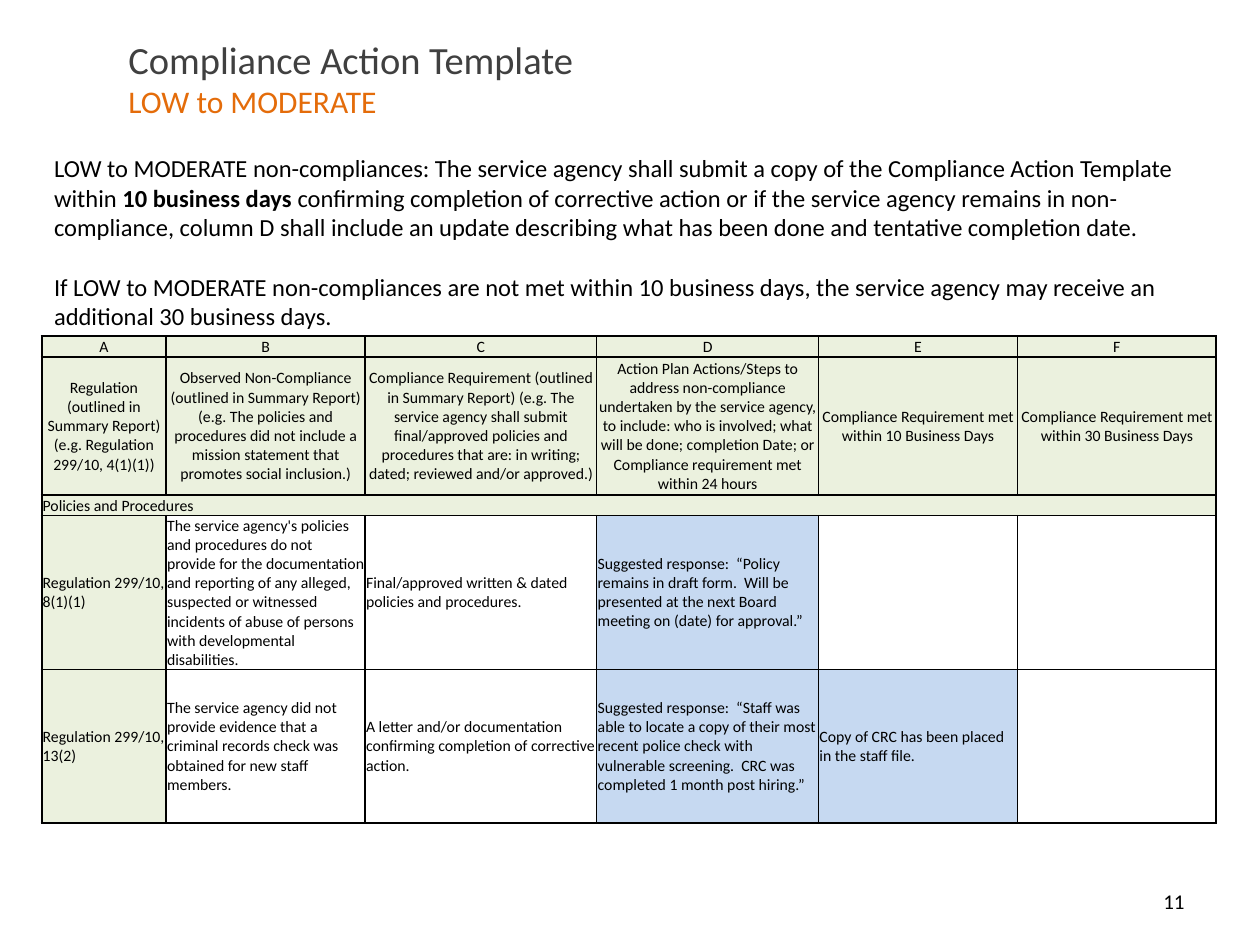
from lxml import etree
from pptx import Presentation
from pptx.dml.color import RGBColor
from pptx.enum.text import MSO_ANCHOR, PP_ALIGN
from pptx.oxml.ns import qn
from pptx.util import Cm, Pt

LEFT, CENTER, RIGHT = PP_ALIGN.LEFT, PP_ALIGN.CENTER, PP_ALIGN.RIGHT
TOP, MIDDLE = MSO_ANCHOR.TOP, MSO_ANCHOR.MIDDLE

FONT = "Calibri"
BLACK = RGBColor(0x00, 0x00, 0x00)
GREY = RGBColor(0x40, 0x40, 0x40)
ORANGE = RGBColor(0xE4, 0x6C, 0x0A)
WHITE = RGBColor(0xFF, 0xFF, 0xFF)
GREEN = RGBColor(0xEB, 0xF1, 0xDE)
BLUE = RGBColor(0xC6, 0xD9, 0xF1)

# Content
TITLE = "Compliance Action Template"
LEVEL = "LOW to MODERATE"
PAGE_NUMBER = "11"
RULES = [  # paragraphs of (text, bold) runs
    [("LOW to MODERATE non-compliances: The service agency shall submit a copy of the "
      "Compliance Action Template within ", False),
     ("10 business days ", True),
     ("confirming completion of corrective action or if the service agency remains in "
      "non-compliance, column D shall include an update describing what has been done "
      "and tentative completion date.", False)],
    [("If LOW to MODERATE non-compliances are not met within 10 business days, the "
      "service agency may receive an additional 30 business days.", False)],
]
HEADINGS = [
    list("ABCDEF"),
    ["Regulation (outlined in Summary Report) (e.g. Regulation 299/10, 4(1)(1))",
     "Observed Non-Compliance (outlined in Summary Report) (e.g. The policies and "
     "procedures did not include a mission statement that promotes social inclusion.)",
     "Compliance Requirement (outlined in Summary Report) (e.g. The service agency shall "
     "submit final/approved policies and procedures that are: in writing; dated; "
     "reviewed and/or approved.)",
     "Action Plan Actions/Steps to address non-compliance undertaken by the service "
     "agency, to include: who is involved; what will be done; completion Date; or "
     "Compliance requirement met within 24 hours",
     "Compliance Requirement met within 10 Business Days",
     "Compliance Requirement met within 30 Business Days"],
]
SECTION = ["Policies and Procedures", "", "", "", "", ""]
FINDINGS = [
    ["Regulation 299/10, 8(1)(1)",
     "The service agency's policies and procedures do not provide for the documentation "
     "and reporting of any alleged, suspected or witnessed incidents of abuse of persons "
     "with developmental disabilities.",
     "Final/approved written & dated policies and procedures.",
     "Suggested response:  “Policy remains in draft form.  Will be presented at the next "
     "Board meeting on (date) for approval.”",
     "", ""],
    ["Regulation 299/10, 13(2)",
     "The service agency did not provide evidence that a criminal records check was "
     "obtained for new staff members.",
     "A letter and/or documentation confirming completion of corrective action.",
     "Suggested response:  “Staff was able to locate a copy of their most recent police "
     "check with vulnerable screening.  CRC was completed 1 month post hiring.”",
     "Copy of CRC has been placed in the staff file.", ""],
]
ROWS = HEADINGS + [SECTION] + FINDINGS
SECTION_ROW = len(HEADINGS)
RESPONSE_COLUMN = 3  # filled-in cells from here on are sample answers

COLUMN_WIDTHS = [2.51, 4.01, 4.67, 4.47, 4.01, 4.01]
ROW_HEIGHTS = [0.41, 2.79, 0.41, 3.1, 3.1]
THICK, THIN = 1.5, 0.75
THICK_ROW_EDGES = {0, 1, SECTION_ROW, len(ROWS)}
THICK_COLUMN_EDGES = {0, 1, len(COLUMN_WIDTHS)}


def add_run(paragraph, text, size, color=BLACK, bold=False):
    run = paragraph.add_run()
    run.text = text
    run.font.name = FONT
    run.font.size = Pt(size)
    run.font.bold = bold
    run.font.color.rgb = color


def add_text_frame(slide, left, top, width, height, anchor):
    frame = slide.shapes.add_textbox(Cm(left), Cm(top), Cm(width), Cm(height)).text_frame
    frame.word_wrap = True
    frame.vertical_anchor = anchor
    return frame


def add_borders(cell, row, column):
    """Draw the cell's four edges, heavier on the frame and the heading rules."""
    edges = [("a:lnL", column in THICK_COLUMN_EDGES),
             ("a:lnR", column + 1 in THICK_COLUMN_EDGES),
             ("a:lnT", row in THICK_ROW_EDGES),
             ("a:lnB", row + 1 in THICK_ROW_EDGES)]
    properties = cell._tc.get_or_add_tcPr()
    for tag, thick in edges:
        line = etree.SubElement(properties, qn(tag), w=str(Pt(THICK if thick else THIN)))
        fill = etree.SubElement(line, qn("a:solidFill"))
        etree.SubElement(fill, qn("a:srgbClr"), val=str(BLACK))


def cell_fill(row, column, text):
    if row <= SECTION_ROW or column == 0:
        return GREEN
    return BLUE if text and column >= RESPONSE_COLUMN else WHITE


def add_action_table(slide):
    table = slide.shapes.add_table(
        len(ROWS), len(COLUMN_WIDTHS), Cm(0.84), Cm(6.78),
        Cm(sum(COLUMN_WIDTHS)), Cm(sum(ROW_HEIGHTS))).table
    table.first_row = table.horz_banding = False
    for column, width in zip(table.columns, COLUMN_WIDTHS):
        column.width = Cm(width)
    for table_row, height in zip(table.rows, ROW_HEIGHTS):
        table_row.height = Cm(height)

    for r, texts in enumerate(ROWS):
        for c, text in enumerate(texts):
            cell = table.cell(r, c)
            add_borders(cell, r, c)
            cell.fill.solid()
            cell.fill.fore_color.rgb = cell_fill(r, c, text)
            cell.margin_left = cell.margin_right = cell.margin_top = Cm(0.02)
            cell.margin_bottom = 0
            cell.vertical_anchor = MIDDLE
            paragraph = cell.text_frame.paragraphs[0]
            paragraph.alignment = CENTER if r < SECTION_ROW else LEFT
            if text:
                add_run(paragraph, text, 9)
            else:
                paragraph.font.size = Pt(9)
    table.cell(SECTION_ROW, 0).merge(table.cell(SECTION_ROW, len(COLUMN_WIDTHS) - 1))


def main():
    prs = Presentation()
    prs.slide_width, prs.slide_height = Cm(25.4), Cm(19.05)
    slide = prs.slides.add_slide(prs.slide_layouts[6])

    # Page number
    page = add_text_frame(slide, 18.21, 17.65, 5.92, 1.02, MIDDLE).paragraphs[0]
    page.alignment = RIGHT
    add_run(page, PAGE_NUMBER, 12)

    add_action_table(slide)

    # Rules above the table
    rules = add_text_frame(slide, 0.84, 2.97, 23.8, 3.84, TOP)
    for i, runs in enumerate(RULES):
        paragraph = rules.add_paragraph() if i else rules.paragraphs[0]
        if i:
            paragraph.space_before = Pt(17)
        for text, bold in runs:
            add_run(paragraph, text, 14, bold=bold)

    # Title with the risk level beneath
    title = add_text_frame(slide, 2.34, 0.84, 19.05, 1.47, MIDDLE).paragraphs[0]
    add_run(title, TITLE, 22, GREY)
    title.add_line_break()
    add_run(title, LEVEL, 18, ORANGE)

    prs.save("out.pptx")


if __name__ == "__main__":
    main()
